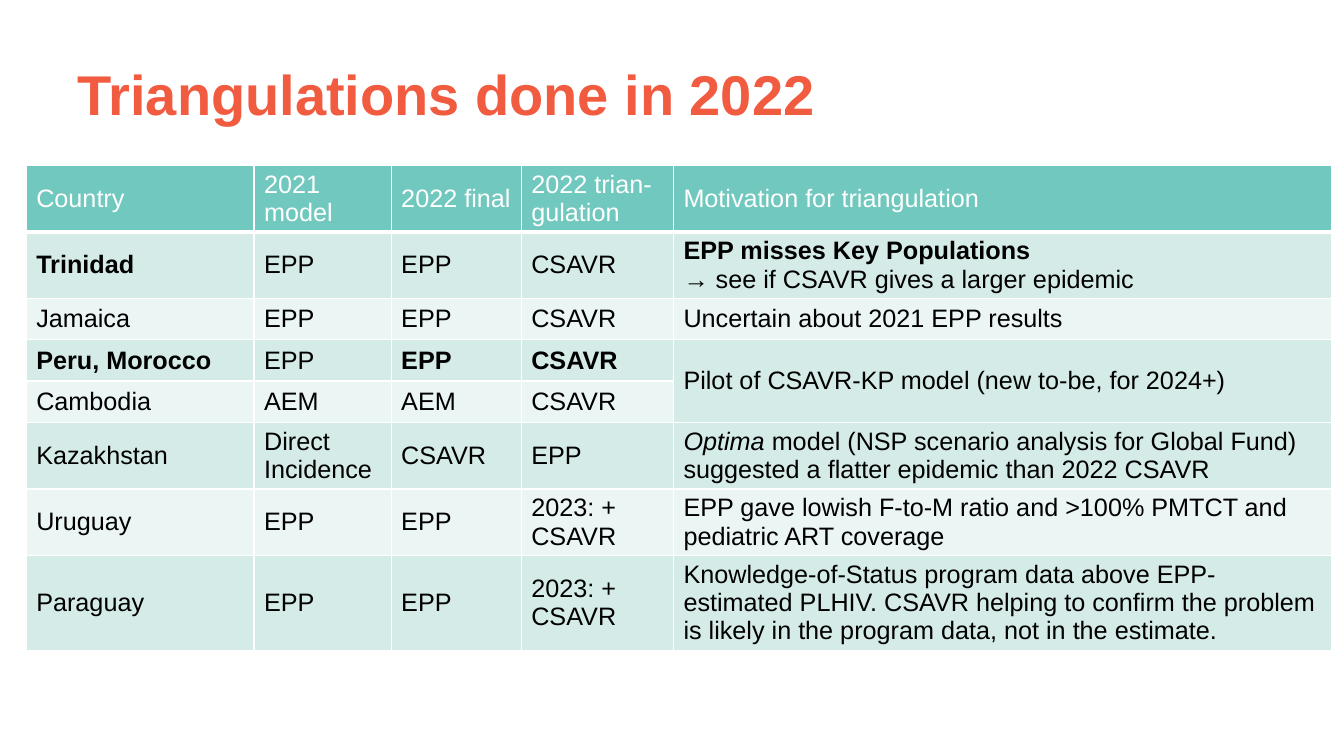
from dataclasses import dataclass

from lxml import etree
from pptx import Presentation
from pptx import util as u
from pptx.enum import text
from pptx.dml.color import RGBColor
from pptx.oxml.ns import qn

COLORS = {
    "title": "F15B40",
    "header": "70C8BE",
    "odd": "D5EBE8",
    "even": "EBF5F4",
    "ink": "000000",
    "white": "FFFFFF",
}
COLUMN_WIDTHS = [2.26, 1.36, 1.29, 1.51, 6.53]
ROW_HEIGHTS = {1: 0.41, 2: 0.66, 3: 0.94}  # by lines of text
HEADER_BORDERS = {"lnL": 1, "lnR": 1, "lnT": 1, "lnB": 3}


@dataclass
class Span:
    words: str
    bold: bool = False
    italic: bool = False


@dataclass
class Row:
    lines: int
    cells: list[str | Span | list[Span]]


ROWS = [
    Row(2, ["Country", "2021 model", "2022 final", "2022 trian-gulation",
            "Motivation for triangulation"]),
    Row(2, [Span("Trinidad", bold=True), "EPP", "EPP", "CSAVR",
            [Span("EPP misses Key Populations \n", bold=True),
             Span("→ see if CSAVR gives a larger epidemic")]]),
    Row(1, ["Jamaica", "EPP", "EPP", "CSAVR", "Uncertain about 2021 EPP results"]),
    Row(1, [Span("Peru, Morocco", bold=True), "EPP", Span("EPP", bold=True),
            Span("CSAVR", bold=True), "Pilot of CSAVR-KP model (new to-be, for 2024+)"]),
    Row(1, ["Cambodia", "AEM", "AEM", "CSAVR"]),
    Row(2, ["Kazakhstan", "Direct Incidence", "CSAVR", "EPP",
            [Span("Optima", italic=True),
             Span(" model (NSP scenario analysis for Global Fund) "
                  "suggested a flatter epidemic than 2022 CSAVR")]]),
    Row(2, ["Uruguay", "EPP", "EPP", "2023: + CSAVR",
            "EPP gave lowish F-to-M ratio and >100% PMTCT and pediatric ART coverage"]),
    Row(3, ["Paraguay", "EPP", "EPP", "2023: + CSAVR",
            "Knowledge-of-Status program data above EPP-estimated PLHIV. CSAVR helping "
            "to confirm the problem is likely in the program data, not in the estimate."]),
]


def rgb(color: str) -> RGBColor:
    return RGBColor.from_string(COLORS[color])


def add_span(paragraph, span: Span, size: float, color: str) -> None:
    """Add a formatted run, turning a final newline into a line break."""
    run = paragraph.add_run()
    run.text = span.words.rstrip("\n")
    font_format = {"name": "Arial", "size": u.Pt(size),
                   "bold": span.bold, "italic": span.italic}
    for attribute, value in font_format.items():
        setattr(run.font, attribute, value)
    run.font.color.rgb = rgb(color)
    if span.words.endswith("\n"):
        paragraph.add_line_break()


def add_header_borders(cell) -> None:
    properties = cell._tc.get_or_add_tcPr()
    for position, (side, points) in enumerate(HEADER_BORDERS.items()):
        line = etree.Element(qn(f"a:{side}"), w=str(u.Pt(points)))
        fill = etree.SubElement(line, qn("a:solidFill"))
        etree.SubElement(fill, qn("a:srgbClr"), val=COLORS["white"])
        properties.insert(position, line)


def fill_cell(cell, content: str | Span | list[Span], fill: str, ink: str) -> None:
    spans = content if isinstance(content, list) else [content]
    for span in spans:
        if isinstance(span, str):
            span = Span(span)
        add_span(cell.text_frame.paragraphs[0], span, 18, ink)
    cell.vertical_anchor = text.MSO_ANCHOR.MIDDLE
    cell.fill.solid()
    cell.fill.fore_color.rgb = rgb(fill)


def add_title(slide, words: str) -> None:
    title = slide.shapes.title
    place = {"left": 0.67, "top": 0.3, "width": 12, "height": 1.25}
    for attribute, inches in place.items():
        setattr(title, attribute, u.Inches(inches))
    title.text_frame.vertical_anchor = text.MSO_ANCHOR.MIDDLE
    paragraph = title.text_frame.paragraphs[0]
    paragraph.alignment = text.PP_ALIGN.LEFT
    add_span(paragraph, Span(words, bold=True), 40, "title")


def add_triangulations(slide) -> None:
    heights = [ROW_HEIGHTS[row.lines] for row in ROWS]
    triangulations = slide.shapes.add_table(
        len(ROWS), len(COLUMN_WIDTHS), u.Inches(0.26), u.Inches(1.64),
        u.Inches(sum(COLUMN_WIDTHS)), u.Inches(sum(heights))).table
    for column, width in zip(triangulations.columns, COLUMN_WIDTHS):
        column.width = u.Inches(width)
    for index, (row, height) in enumerate(zip(ROWS, heights)):
        triangulations.rows[index].height = u.Inches(height)
        fill = "header" if index == 0 else "odd" if index % 2 else "even"
        ink = "white" if index == 0 else "ink"
        for column, content in enumerate(row.cells):
            cell = triangulations.cell(index, column)
            fill_cell(cell, content, fill, ink)
            if index == 0:
                add_header_borders(cell)
    triangulations.cell(3, 4).merge(triangulations.cell(4, 4))


def main() -> None:
    presentation = Presentation()
    presentation.slide_width = u.Inches(13.33)
    presentation.slide_height = u.Inches(7.5)
    slide = presentation.slides.add_slide(presentation.slide_layouts[5])
    add_title(slide, "Triangulations done in 2022")
    add_triangulations(slide)
    presentation.save("out.pptx")


if __name__ == "__main__":
    main()
